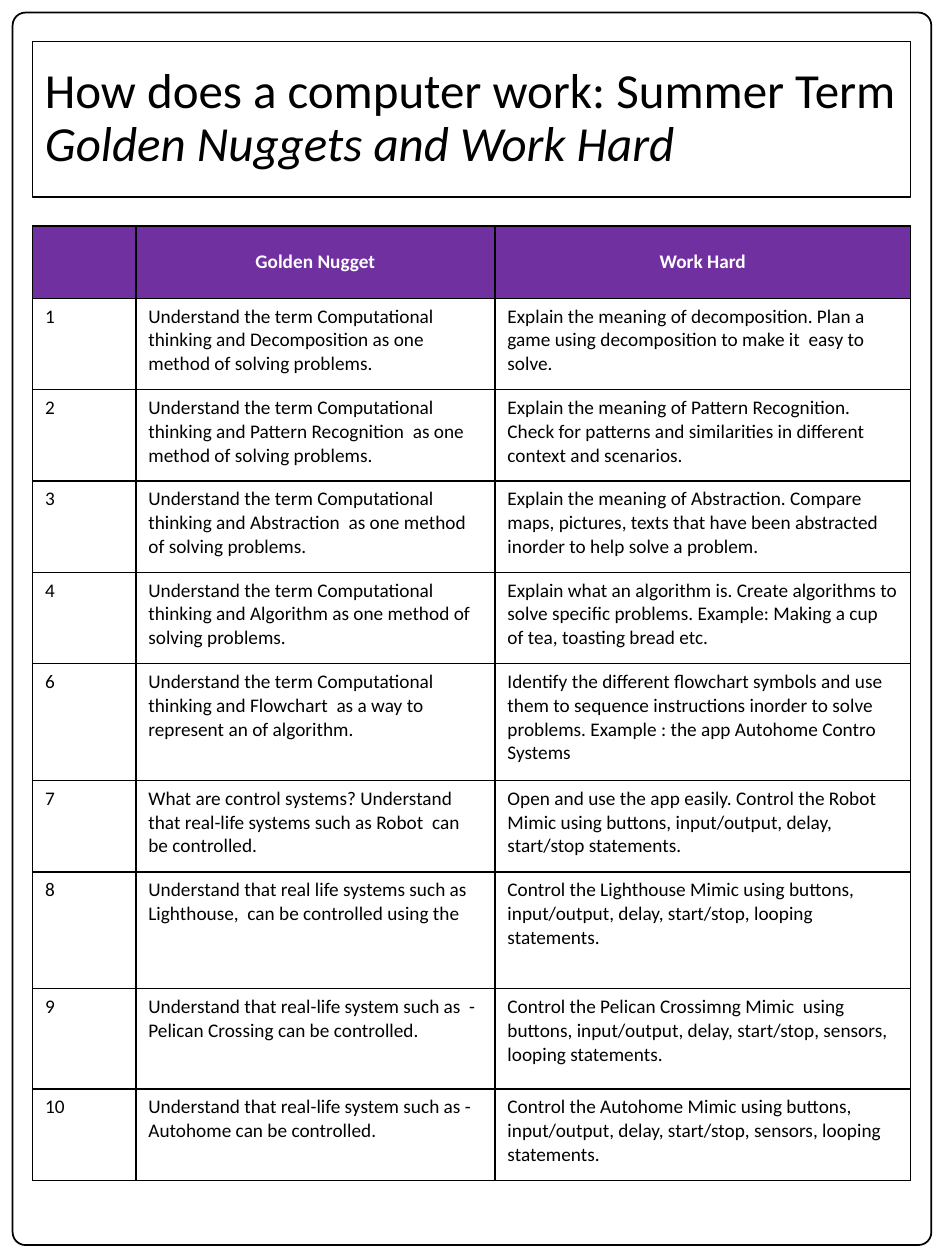
from lxml import etree
from pptx import Presentation
from pptx.dml.color import RGBColor
from pptx.enum import shapes, text
from pptx.oxml.ns import qn
from pptx.util import Pt

COLORS = {"ink": "000000", "paper": "FFFFFF", "header": "7030A0"}
FONT = "Calibri"
COLUMN_WIDTHS = [59, 205.2, 237.6]
HEADER_HEIGHT = 41.5
THREE_LINES, NINTH_ROW, FOUR_LINES = 52.2, 57.4, 66.8

HEADINGS = ["", "Golden Nugget", "Work Hard"]
# Lesson number, golden nugget, work hard, row height
LESSONS = [
    ("1", "Understand the term Computational thinking and Decomposition as one method of solving problems.",
     "Explain the meaning of decomposition. Plan a game using decomposition to make it  easy to solve.",
     THREE_LINES),
    ("2", "Understand the term Computational thinking and Pattern Recognition  as one method of solving problems.",
     "Explain the meaning of Pattern Recognition. Check for patterns and similarities in different "
     "context and scenarios.", THREE_LINES),
    ("3", "Understand the term Computational thinking and Abstraction  as one method of solving problems.",
     "Explain the meaning of Abstraction. Compare maps, pictures, texts that have been abstracted "
     "inorder to help solve a problem.", THREE_LINES),
    ("4", "Understand the term Computational thinking and Algorithm as one method of solving problems.",
     "Explain what an algorithm is. Create algorithms to solve specific problems. Example: Making a "
     "cup of tea, toasting bread etc.", THREE_LINES),
    ("6", "Understand the term Computational thinking and Flowchart  as a way to represent an of algorithm.",
     "Identify the different flowchart symbols and use them to sequence instructions inorder to solve "
     "problems. Example : the app Autohome Contro Systems", FOUR_LINES),
    ("7", "What are control systems? Understand that real-life systems such as Robot  can be controlled.",
     "Open and use the app easily. Control the Robot Mimic using buttons, input/output, delay, "
     "start/stop statements.", THREE_LINES),
    ("8", "Understand that real life systems such as Lighthouse,  can be controlled using the",
     "Control the Lighthouse Mimic using buttons, input/output, delay, start/stop, looping statements.",
     FOUR_LINES),
    ("9", "Understand that real-life system such as  - Pelican Crossing can be controlled.",
     "Control the Pelican Crossimng Mimic  using buttons, input/output, delay, start/stop, sensors, "
     "looping statements.", NINTH_ROW),
    ("10", "Understand that real-life system such as - Autohome can be controlled.",
     "Control the Autohome Mimic using buttons, input/output, delay, start/stop, sensors, "
     "looping statements.", THREE_LINES),
]


def color(name):
    return RGBColor.from_string(COLORS[name])


def style_runs(para, size, ink, bold=False):
    for span in para.runs:
        span.font.name = FONT
        span.font.size = Pt(size)
        span.font.bold = bold
        span.font.color.rgb = color(ink)


def add_outline(page, kind, box, width):
    """Add an unfilled shape with a black line."""
    shape = page.shapes.add_shape(kind, *map(Pt, box))
    shape.shadow.inherit = False
    shape.fill.background()
    shape.line.color.rgb = color("ink")
    shape.line.width = Pt(width)
    return shape


def add_title(page, box):
    frame = add_outline(page, shapes.MSO_SHAPE.RECTANGLE, box, 0.75).text_frame
    frame.word_wrap = True
    frame.vertical_anchor = text.MSO_ANCHOR.MIDDLE
    para = frame.paragraphs[0]
    para.text = "How does a computer work: Summer Term\vGolden Nuggets and Work Hard"
    para.alignment = text.PP_ALIGN.LEFT
    para.line_spacing = 0.9
    style_runs(para, 28, "ink")
    para.runs[1].font.italic = True


def add_borders(cell):
    properties = cell._tc.get_or_add_tcPr()
    for index, side in enumerate(("lnL", "lnR", "lnT", "lnB")):
        line = etree.Element(qn(f"a:{side}"), w=str(Pt(1)))
        fill = etree.SubElement(line, qn("a:solidFill"))
        etree.SubElement(fill, qn("a:srgbClr"), val=COLORS["ink"])
        properties.insert(index, line)


def fill_cell(cell, words, is_header):
    cell.fill.solid()
    cell.fill.fore_color.rgb = color("header" if is_header else "paper")
    add_borders(cell)
    para = cell.text_frame.paragraphs[0]
    para.text = words
    if is_header:
        cell.vertical_anchor = text.MSO_ANCHOR.MIDDLE
        para.alignment = text.PP_ALIGN.CENTER
    style_runs(para, 11, "paper" if is_header else "ink", is_header)


def add_lessons(page, left, top):
    rows = [(*HEADINGS, HEADER_HEIGHT), *LESSONS]
    box = (left, top, sum(COLUMN_WIDTHS), sum(row[-1] for row in rows))
    table = page.shapes.add_table(len(rows), len(COLUMN_WIDTHS), *map(Pt, box)).table
    for column, width in zip(table.columns, COLUMN_WIDTHS):
        column.width = Pt(width)
    for r, (*words, height) in enumerate(rows):
        table.rows[r].height = Pt(height)
        for c, entry in enumerate(words):
            fill_cell(table.cell(r, c), entry, r == 0)


def add_frame(page, box):
    frame = add_outline(page, shapes.MSO_SHAPE.ROUNDED_RECTANGLE, box, 1)
    frame.adjustments[0] = 0.014


def main():
    deck = Presentation()
    deck.slide_width, deck.slide_height = Pt(540), Pt(720)
    page = deck.slides.add_slide(deck.slide_layouts[6])
    add_title(page, (18.6, 23.7, sum(COLUMN_WIDTHS), 88.9))
    add_lessons(page, 18.6, 129)
    add_frame(page, (7.2, 7.2, 525, 704.3))
    deck.save("out.pptx")


if __name__ == "__main__":
    main()
